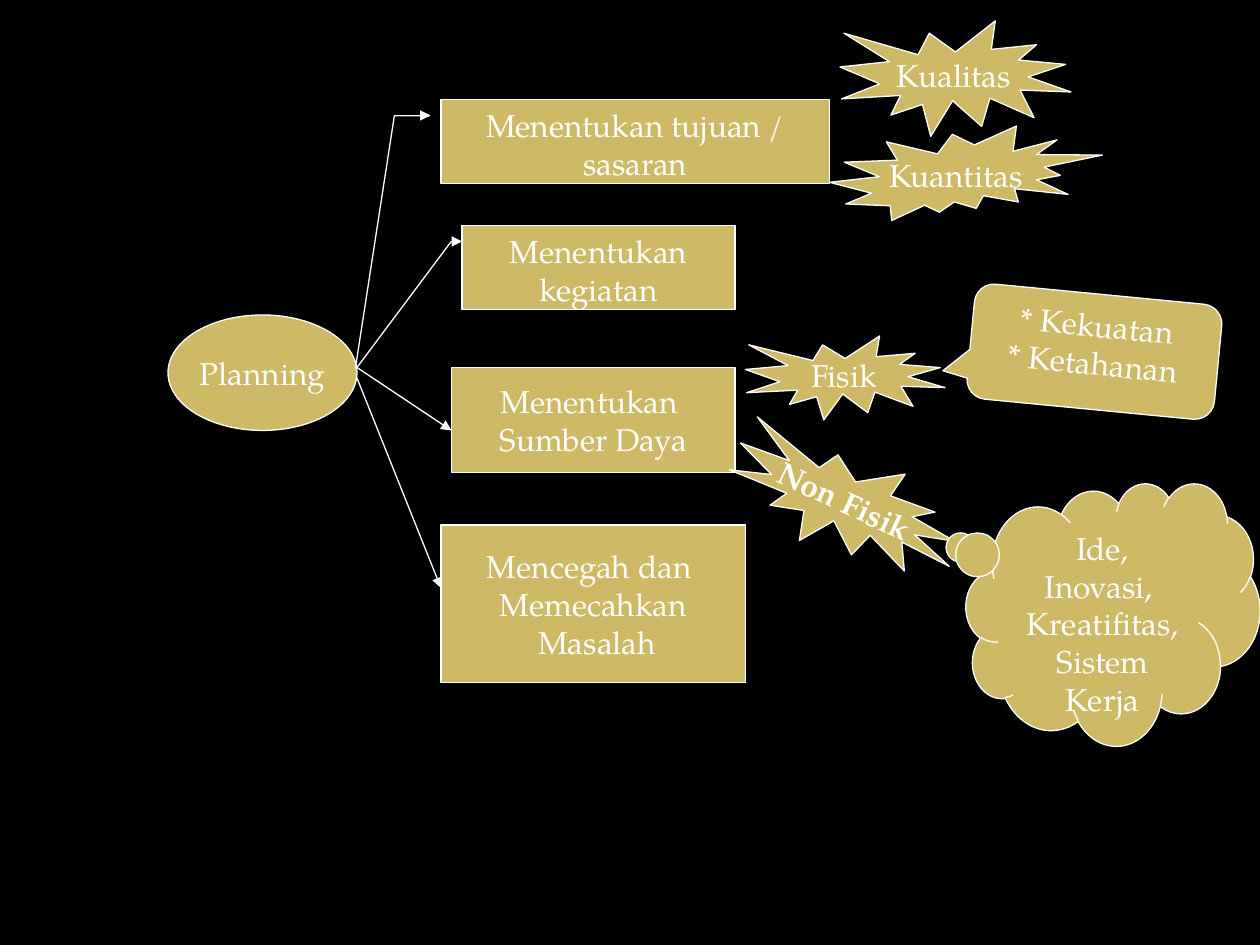
from lxml import etree
from pptx import Presentation
from pptx.dml.color import RGBColor
from pptx.enum.shapes import MSO_CONNECTOR, MSO_SHAPE
from pptx.enum.text import MSO_ANCHOR, PP_ALIGN
from pptx.oxml.ns import qn
from pptx.util import Pt

OVAL = MSO_SHAPE.OVAL
RECT = MSO_SHAPE.RECTANGLE
BURST = MSO_SHAPE.EXPLOSION1
SPLASH = MSO_SHAPE.EXPLOSION2
BENT = MSO_SHAPE.LINE_CALLOUT_2
SLANT = MSO_SHAPE.LINE_CALLOUT_1
BUBBLE = MSO_SHAPE.ROUNDED_RECTANGULAR_CALLOUT
CLOUD = MSO_SHAPE.CLOUD_CALLOUT
STRAIGHT = MSO_CONNECTOR.STRAIGHT
CENTER = PP_ALIGN.CENTER
TOP, MIDDLE = MSO_ANCHOR.TOP, MSO_ANCHOR.MIDDLE

BLACK = RGBColor(0x00, 0x00, 0x00)
WHITE = RGBColor(0xFF, 0xFF, 0xFF)
GOLD = RGBColor(0xCE, 0xB9, 0x66)


def write(frame, text, size=18, font="TeX Gyre Pagella", color=WHITE,
          bold=False, anchor=MIDDLE, wrap=False):
    """Fill the frame with one centred paragraph per line of text."""
    frame.word_wrap = wrap
    frame.vertical_anchor = anchor
    frame.text = text
    for para in frame.paragraphs:
        para.alignment = CENTER
        face = para.runs[0].font
        face.size, face.name, face.bold = Pt(size), font, bold
        face.color.rgb = color


class Chart:
    """Style and current slide of the planning diagram."""

    def __init__(self, slide, fill=GOLD, line=WHITE, width=0.75):
        self.slide = slide
        self.fill, self.line, self.width = fill, line, width

    def back(self, color):
        fill = self.slide.background.fill
        fill.solid()
        fill.fore_color.rgb = color

    def edge(self, line):
        line.color.rgb = self.line
        line.width = Pt(self.width)

    def node(self, kind, box, text, turn=0, bold=False):
        shape = self.slide.shapes.add_shape(kind, *map(Pt, box))
        shape.shadow.inherit = False
        shape.fill.solid()
        shape.fill.fore_color.rgb = self.fill
        self.edge(shape.line)
        shape.rotation = turn
        write(shape.text_frame, text, bold=bold)
        return shape

    def callout(self, kind, box, text, tail, turn=0):
        """Add a node whose text wraps from the top and whose tail is set."""
        shape = self.node(kind, box, text, turn)
        write(shape.text_frame, text, anchor=TOP, wrap=True)
        for i, value in enumerate(tail):
            shape.adjustments[i] = value

    def arrow(self, start, end):
        link = self.slide.shapes.add_connector(
            STRAIGHT, *map(Pt, (*start, *end)))
        self.edge(link.line)
        props = link._element.spPr
        tip = etree.SubElement(props.find(qn("a:ln")), qn("a:tailEnd"))
        tip.set("type", "triangle")
        etree.SubElement(props, qn("a:effectLst"))


def main():
    deck = Presentation()
    deck.slide_width, deck.slide_height = Pt(720), Pt(540)
    chart = Chart(deck.slides.add_slide(deck.slide_layouts[6]))
    chart.back(BLACK)

    chart.node(OVAL, (96, 180, 108, 66), "Planning")

    chart.callout(BENT, (252, 57, 222, 48), "Menentukan tujuan / sasaran",
                  (0.19, -0.03, 0.19, -0.12, 3.19, -0.22))
    chart.node(BURST, (480, 12, 132, 66), "Kualitas")
    chart.node(SPLASH, (474, 72, 156, 54), "Kuantitas")
    chart.arrow((240, 66), (246, 66))

    chart.callout(SLANT, (264, 129, 156, 48), "Menentukan kegiatan",
                  (0.19, -0.04, 1.71, -0.39))
    chart.arrow((258, 138), (264, 138))

    chart.arrow((204, 210), (258, 246))
    chart.node(RECT, (258, 210, 162, 60), "Menentukan \nSumber Daya")
    chart.node(BURST, (426, 192, 114, 48), "Fisik")
    chart.node(BURST, (414, 258, 138, 60), "Non Fisik", turn=25.2, bold=True)
    chart.callout(BUBBLE, (554.4, 168, 142, 66), "* Kekuatan\n* Ketahanan",
                  (-0.6, 0.29, 0.17), turn=5.5)
    chart.callout(CLOUD, (552, 276, 168, 150),
                  "Ide, Inovasi, \nKreatifitas,\nSistem Kerja",
                  (-0.53, -0.26))

    chart.arrow((204, 216), (252, 336))
    chart.node(RECT, (252, 300, 174, 90),
               "Mencegah dan \nMemecahkan\n Masalah")

    deck.save("out.pptx")


if __name__ == "__main__":
    main()
